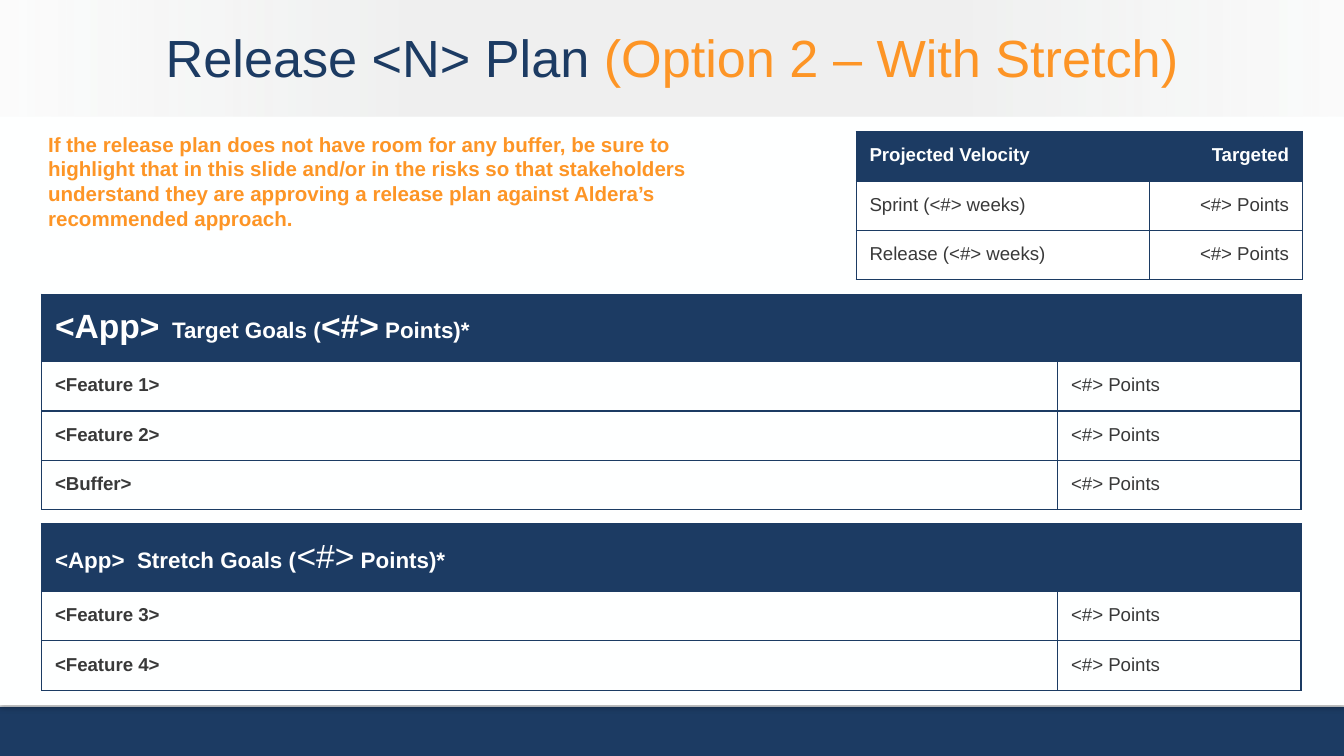
from lxml.etree import SubElement
from pptx import Presentation
from pptx.dml.color import RGBColor
from pptx.enum.shapes import MSO_SHAPE
from pptx.enum.text import MSO_ANCHOR, PP_ALIGN
from pptx.oxml import parse_xml
from pptx.oxml.ns import nsdecls, qn
from pptx.util import Inches, Pt

NAVY, ORANGE, PAPER, WHITE, GREY, SILVER = "1C3B63", "FD9526", "FEFFFF", "FFFFFF", "393939", "C4C5C4"
COLS, ROWS = 100, 56.25
LEFT, RIGHT = PP_ALIGN.LEFT, PP_ALIGN.RIGHT
POINTS = "<#> Points"


def rgb(value):
    return RGBColor.from_string(value)


class Deck:
    font = "Arial"
    pad = 1

    def __init__(self):
        self.prs = Presentation()
        self.prs.slide_width, self.prs.slide_height = Inches(10), Inches(5.625)
        self.s = self.prs.slides.add_slide(self.prs.slide_layouts[6])
        fill = self.s.background.fill
        fill.solid()
        fill.fore_color.rgb = rgb(PAPER)

    def x(self, cols):
        return int(self.prs.slide_width * cols / COLS)

    def y(self, rows):
        return int(self.prs.slide_height * rows / ROWS)

    def box(self, x, y, w, h):
        return self.x(x), self.y(y), self.x(w), self.y(h)

    def rect(self, at, color, line=None):
        sp = self.s.shapes.add_shape(MSO_SHAPE.RECTANGLE, *self.box(*at))
        sp.shadow.inherit = False
        sp.fill.solid()
        sp.fill.fore_color.rgb = rgb(color)
        if line:
            sp.line.color.rgb = rgb(line)
            sp.line.width = Pt(0.75)
        else:
            sp.line.fill.background()
        return sp

    def drop_shadow(self, sp):
        effects = sp.element.spPr.find(qn("a:effectLst"))
        effects.append(parse_xml(
            f'<a:outerShdw {nsdecls("a")} blurRad="{Pt(3.1)}" dist="{Pt(1.8)}" dir="5400000" rotWithShape="0">'
            '<a:srgbClr val="000000"><a:alpha val="35000"/></a:srgbClr></a:outerShdw>'))

    def fade(self, sp, color, stops):
        sp.fill.gradient()
        sp.fill.gradient_angle = 180
        stop_list = sp.element.spPr.find(qn("a:gradFill")).find(qn("a:gsLst"))
        for gs in list(stop_list):
            stop_list.remove(gs)
        for position, alpha in stops:
            gs = SubElement(stop_list, qn("a:gs"), pos=str(position * 1000))
            clr = SubElement(gs, qn("a:srgbClr"), val=color)
            SubElement(clr, qn("a:alpha"), val=str(alpha * 1000))

    def set_runs(self, tf, runs, align=LEFT):
        p = tf.paragraphs[0]
        p.alignment = align
        p.font.name = self.font
        fonts = []
        for text, size, color, bold in runs:
            r = p.add_run()
            r.text = text
            fonts.append((r.font, size, color, bold))
        if len({run[1:] for run in runs}) == 1:
            fonts = [(p.font, *runs[0][1:])]
        for font, size, color, bold in fonts:
            font.size, font.bold = Pt(size), bold
            font.color.rgb = rgb(color)

    def text(self, at, runs, align=LEFT, anchor=MSO_ANCHOR.TOP, pad_y=1):
        tf = self.s.shapes.add_textbox(*self.box(*at)).text_frame
        tf.word_wrap = True
        tf.vertical_anchor = anchor
        tf.margin_left = tf.margin_right = self.x(self.pad)
        tf.margin_top = tf.margin_bottom = self.y(pad_y)
        self.set_runs(tf, runs, align)

    def cell(self, cell, runs, fill, line, align=LEFT):
        cell.margin_left = cell.margin_right = self.x(self.pad)
        cell.margin_top = cell.margin_bottom = self.y(self.pad)
        cell.fill.solid()
        cell.fill.fore_color.rgb = rgb(fill)
        tc_pr = cell._tc.get_or_add_tcPr()
        for i, side in enumerate("LRTB"):
            tc_pr.insert(i, parse_xml(
                f'<a:ln{side} {nsdecls("a")} w="{Pt(line)}"><a:solidFill>'
                f'<a:srgbClr val="{NAVY}"/></a:solidFill></a:ln{side}>'))
        self.set_runs(cell.text_frame, runs, align)

    def table(self, x, y, widths, heights):
        table = self.s.shapes.add_table(
            len(heights), len(widths), *self.box(x, y, sum(widths), sum(heights))).table
        for column, width in zip(table.columns, widths):
            column.width = self.x(width)
        for row, height in zip(table.rows, heights):
            row.height = self.y(height)
        return table

    def velocity(self, x, y, widths, rows):
        table = self.table(x, y, widths, [3.55] * len(rows))
        for i, row in enumerate(rows):
            color, fill = (GREY, WHITE) if i else (PAPER, NAVY)
            for j, text in enumerate(row):
                self.cell(table.cell(i, j), [(text, 10, color, not i)], fill, 0.75, (LEFT, RIGHT)[j])

    def goals(self, x, y, widths, heading, names):
        table = self.table(x, y, widths, [4.8] + [3.55] * len(names))
        table.cell(0, 0).merge(table.cell(0, 1))
        runs = [(text, size, WHITE, bold) for text, size, bold in heading]
        self.cell(table.cell(0, 0), runs, NAVY, 1)
        for i, name in enumerate(names, 1):
            for j, text in enumerate((name, POINTS)):
                self.cell(table.cell(i, j), [(text, 10, GREY, j == 0)], PAPER, 0.75)


def main():
    d = Deck()
    d.rect((0, 52.6, COLS, 3.65), NAVY)
    d.drop_shadow(d.rect((0, 0, COLS, 52.4), PAPER, PAPER))
    d.fade(d.rect((0, 0, COLS, 8.7), SILVER), SILVER, [(0, 6), (29, 25), (69, 25), (99, 5)])

    d.text((0, 1.6, COLS, 5.2),
           [("Release <N> Plan ", 28, NAVY, False), ("(Option 2 – With Stretch)", 28, ORANGE, False)],
           PP_ALIGN.CENTER, MSO_ANCHOR.MIDDLE, 0.5)

    d.velocity(63.7, 9.8, (21.8, 11.4), [
        ("Projected Velocity", "Targeted"),
        ("Sprint (<#> weeks)", POINTS),
        ("Release (<#> weeks)", POINTS),
    ])

    goal_widths = (75.6, 18.1)
    d.goals(3.1, 21.9, goal_widths,
            [("<App>", 18, True), ("  Target Goals (", 12, True), ("<#>", 18, True), (" Points)*", 12, True)],
            ["<Feature 1>", "<Feature 2>", "<Buffer>"])
    d.goals(3.1, 39, goal_widths,
            [("<App>  Stretch Goals (", 12, True), ("<#>", 18, False), (" Points)*", 12, True)],
            ["<Feature 3>", "<Feature 4>"])

    d.text((2.6, 8.8, 53.6, 8.7), [(
        "If the release plan does not have room for any buffer, be sure to highlight that in this slide "
        "and/or in the risks so that stakeholders understand they are approving a release plan against "
        "Aldera’s recommended approach.", 11, ORANGE, True)])

    d.prs.save("out.pptx")


if __name__ == "__main__":
    main()
